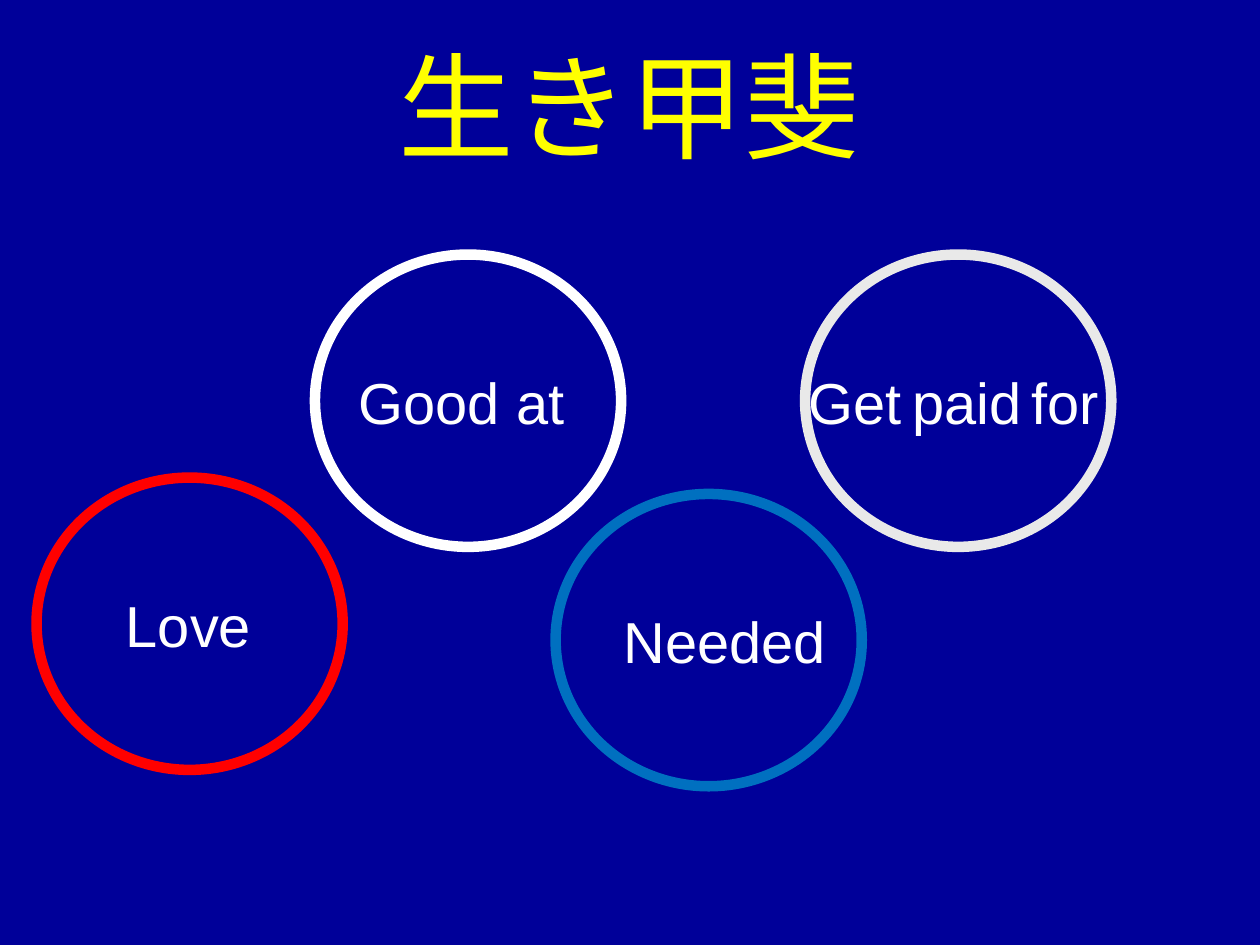
from dataclasses import dataclass

from pptx import Presentation
from pptx.dml.color import RGBColor
from pptx.enum.shapes import MSO_SHAPE
from pptx.enum.text import MSO_AUTO_SIZE, PP_ALIGN
from pptx.shapes.shapetree import GroupShapes
from pptx.slide import Slide
from pptx.text.text import _Paragraph
from pptx.util import Inches, Pt

ELLIPSE = MSO_SHAPE.OVAL
CENTER = PP_ALIGN.CENTER
GROW = MSO_AUTO_SIZE.SHAPE_TO_FIT_TEXT

NAVY = RGBColor(0x00, 0x00, 0x99)
YELLOW = RGBColor(0xFF, 0xFF, 0x00)
WHITE = RGBColor(0xFF, 0xFF, 0xFF)
RED = RGBColor(0xFF, 0x00, 0x00)
BLUE = RGBColor(0x00, 0x70, 0xC0)
SILVER = RGBColor(0xE9, 0xE9, 0xE9)

CIRCLE_WIDTH, CIRCLE_HEIGHT = 2.43, 2.32
LABEL_DROP, LABEL_HEIGHT = 0.84, 0.66
LABEL_SIZE, NARROW_SPACE_SIZE = 33, 21


@dataclass(frozen=True)
class Circle:
    left: float
    top: float
    color: RGBColor
    label_left: float
    label_width: float
    label: tuple[str, ...]


GOOD_AT = Circle(2.5, 2.02, WHITE, 2.75, 1.94, ("Good at",))
NEEDED = Circle(4.41, 3.92, BLUE, 4.85, 1.85, ("Needed",))
LOVE = Circle(0.29, 3.79, RED, 0.9, 1.41, ("Love",))
PAID_FOR = Circle(6.39, 2.02, SILVER, 6.32, 2.58, ("Get", " ", "paid", " ", "for"))


def add_run(paragraph: _Paragraph, text: str, font: str, size: float, color: RGBColor) -> None:
    run = paragraph.add_run()
    run.text = text
    run.font.name = font
    run.font.size = Pt(size)
    run.font.color.rgb = color


def add_text_box(shapes: GroupShapes, left: float, top: float, width: float, height: float) -> _Paragraph:
    """Add a wrapping text box that grows with its text; return its paragraph."""
    frame = shapes.add_textbox(Inches(left), Inches(top), Inches(width), Inches(height)).text_frame
    frame.word_wrap = True
    frame.auto_size = GROW
    return frame.paragraphs[0]


def add_title(slide: Slide) -> None:
    title = add_text_box(slide.shapes, 0.08, 0.23, 9.83, 1.21)
    title.alignment = CENTER
    add_run(title, "生き甲斐", "Karla", 66, YELLOW)


def add_circle(slide: Slide, circle: Circle) -> None:
    """Group a ring with its label."""
    shapes = slide.shapes.add_group_shape().shapes
    ring = shapes.add_shape(
        ELLIPSE, Inches(circle.left), Inches(circle.top), Inches(CIRCLE_WIDTH), Inches(CIRCLE_HEIGHT)
    )
    ring.shadow.inherit = False
    ring.fill.background()
    ring.line.color.rgb = circle.color
    ring.line.width = Pt(6)

    label = add_text_box(shapes, circle.label_left, circle.top + LABEL_DROP, circle.label_width, LABEL_HEIGHT)
    for part in circle.label:
        size = NARROW_SPACE_SIZE if part == " " else LABEL_SIZE
        add_run(label, part, "Arial", size, WHITE)


def main() -> None:
    presentation = Presentation()
    presentation.slide_width = Inches(10)
    presentation.slide_height = Inches(7.5)
    slide = presentation.slides.add_slide(presentation.slide_layouts[6])
    slide.background.fill.solid()
    slide.background.fill.fore_color.rgb = NAVY

    add_circle(slide, GOOD_AT)
    add_title(slide)
    for circle in (NEEDED, LOVE, PAID_FOR):
        add_circle(slide, circle)
    presentation.save("out.pptx")


if __name__ == "__main__":
    main()
